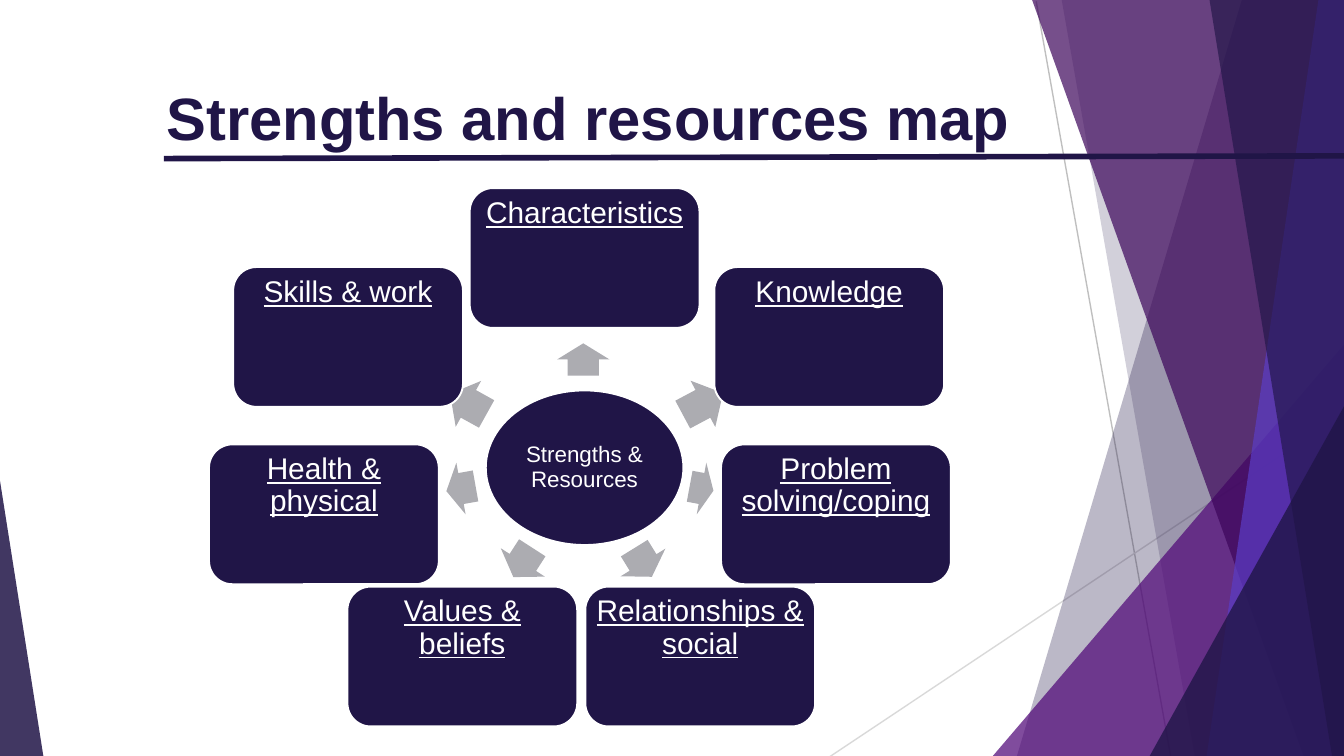
from math import cos, pi

from lxml import etree
from pptx import Presentation
from pptx import util as u
from pptx.dml.color import RGBColor
from pptx.enum import shapes, text
from pptx.oxml.ns import qn

NAVY, WHITE, GREY = "201547", "FFFFFF", "ACACB1"
RIGHT, BOTTOM = 10.04, 5.68
FONT = "Arial"

TITLE = "Strengths and resources map"
HUB = "Strengths & Resources"
# label, box offset from hub, arrow left, arrow top, arrow length, arrow rotation
SPOKES = [
    ("Characteristics", 0, 4.22, 2.48, 0.24, 270),
    ("Knowledge", 1.82, 5.06, 2.81, 0.34, 331.9),
    ("Problem solving/coping", 1.87, 5.13, 3.44, 0.18, 10.5),
    ("Relationships & social", 0.86, 4.66, 3.99, 0.25, 58.3),
    ("Values & beliefs", -0.91, 3.76, 3.99, 0.26, 122.8),
    ("Health & physical", -1.94, 3.32, 3.44, 0.22, 169.9),
    ("Skills & work", -1.76, 3.33, 2.81, 0.31, 209),
]
HUB_X, HUB_Y, HUB_W, HUB_H = 4.35, 3.48, 1.47, 1.15
RADIUS = 1.56
BOX_W, BOX_H, ARROW_H = 1.71, 1.04, 0.39

HAIRLINES = [
    (7.71, 0.01, 8.72, BOTTOM, "BFBFBF", 0.75),
    (RIGHT, 3.05, 6.1, BOTTOM, "D9D9D9", 0.75),
]
# top x, bottom x, colour, opacity
BACK_FACETS = [(9.24, 7.55, NAVY, 30), (7.9, 8.9, NAVY, 20)]
FRONT_FACETS = [
    (7.68, 9.72, "3C055A", 70),
    (9.81, 8.97, "5B3DC6", 70),
    (9, 9.92, NAVY, 65),
]
# left, top, width, height, apex, colour, opacity
BACK_TRIANGLE = (7.34, 2.53, 2.69, 3.15, 1, "500778", 72)
FRONT_TRIANGLES = [
    (8.53, 2.97, 1.5, 2.7, 1, NAVY, 80),
    (-0.04, 3.32, 0.37, 2.35, 0, NAVY, 85),
]

deck = Presentation()
deck.slide_width = u.Inches(10)
deck.slide_height = deck.slide_width * 9 // 16
page = deck.slides.add_slide(deck.slide_layouts[6])


def rgb(value):
    return RGBColor.from_string(value)


def paint(shape, colour, opacity=100, outline=None):
    shape.shadow.inherit = False
    shape.fill.solid()
    shape.fill.fore_color.rgb = rgb(colour)
    if opacity < 100:
        tint = shape.fill._xPr.find(qn("a:solidFill"))[0]
        etree.SubElement(tint, qn("a:alpha")).set("val", str(opacity * 1000))
    if outline:
        shape.line.color.rgb = rgb(outline)
        shape.line.width = u.Pt(1)
    else:
        shape.line.fill.background()


def add_preset(kind, left, top, width, height):
    return page.shapes.add_shape(kind, *map(u.Inches, (left, top, width, height)))


def add_line(x1, y1, x2, y2, colour, width):
    line = page.shapes.add_connector(
        shapes.MSO_CONNECTOR.STRAIGHT, *map(u.Inches, (x1, y1, x2, y2)))
    line.line.color.rgb = rgb(colour)
    line.line.width = u.Pt(width)
    etree.SubElement(line._element.spPr, qn("a:effectLst"))


def add_facet(top_x, bottom_x, colour, opacity):
    outline = page.shapes.build_freeform(u.Inches(top_x), 0, scale=1.0)
    corners = [(RIGHT, 0), (RIGHT, BOTTOM), (bottom_x, BOTTOM)]
    outline.add_line_segments([(u.Inches(x), u.Inches(y)) for x, y in corners])
    paint(outline.convert_to_shape(), colour, opacity)


def add_triangle(left, top, width, height, apex, colour, opacity):
    triangle = add_preset(shapes.MSO_SHAPE.ISOSCELES_TRIANGLE, left, top, width, height)
    triangle.adjustments[0] = apex
    paint(triangle, colour, opacity)


def write(shape, label, size, colour, anchor, side=0.02, top=0.02):
    frame = shape.text_frame
    frame.word_wrap = True
    frame.vertical_anchor = anchor
    frame.margin_left = frame.margin_right = u.Inches(side)
    frame.margin_top = frame.margin_bottom = u.Inches(top)
    para = frame.paragraphs[0]
    para.text = label
    para.font.name, para.font.size = FONT, u.Pt(size)
    para.font.color.rgb = rgb(colour)
    return para


def add_node(kind, x, y, width, height, label, size, anchor):
    node = add_preset(kind, x - width / 2, y - height / 2, width, height)
    paint(node, NAVY, outline=WHITE)
    para = write(node, label, size, WHITE, anchor)
    para.alignment = text.PP_ALIGN.CENTER
    para.line_spacing = 0.9
    return para


for hairline in HAIRLINES:
    add_line(*hairline)
for facet in BACK_FACETS:
    add_facet(*facet)
add_triangle(*BACK_TRIANGLE)
for facet in FRONT_FACETS:
    add_facet(*facet)
for triangle in FRONT_TRIANGLES:
    add_triangle(*triangle)
add_line(1.22, 1.18, 10, 1.16, NAVY, 3)

title = page.shapes.add_textbox(*map(u.Inches, (1.14, 0.55, 6.85, 1.08)))
heading = write(title, TITLE, 32, NAVY, text.MSO_ANCHOR.TOP, 0.1, 0.05)
heading.font.bold = True

add_node(shapes.MSO_SHAPE.OVAL, HUB_X, HUB_Y, HUB_W, HUB_H, HUB, 12,
         text.MSO_ANCHOR.MIDDLE)

for index, (label, offset, left, top, length, rotation) in enumerate(SPOKES):
    arrow = add_preset(shapes.MSO_SHAPE.RIGHT_ARROW, left, top, length, ARROW_H)
    arrow.adjustments[0], arrow.adjustments[1] = 0.6, 0.5
    arrow.rotation = rotation
    paint(arrow, GREY)
    y = HUB_Y - RADIUS * cos(2 * pi * index / len(SPOKES))
    para = add_node(shapes.MSO_SHAPE.ROUNDED_RECTANGLE, HUB_X + offset, y,
                    BOX_W, BOX_H, label, 16, text.MSO_ANCHOR.TOP)
    para.font.underline = True

deck.save("out.pptx")
